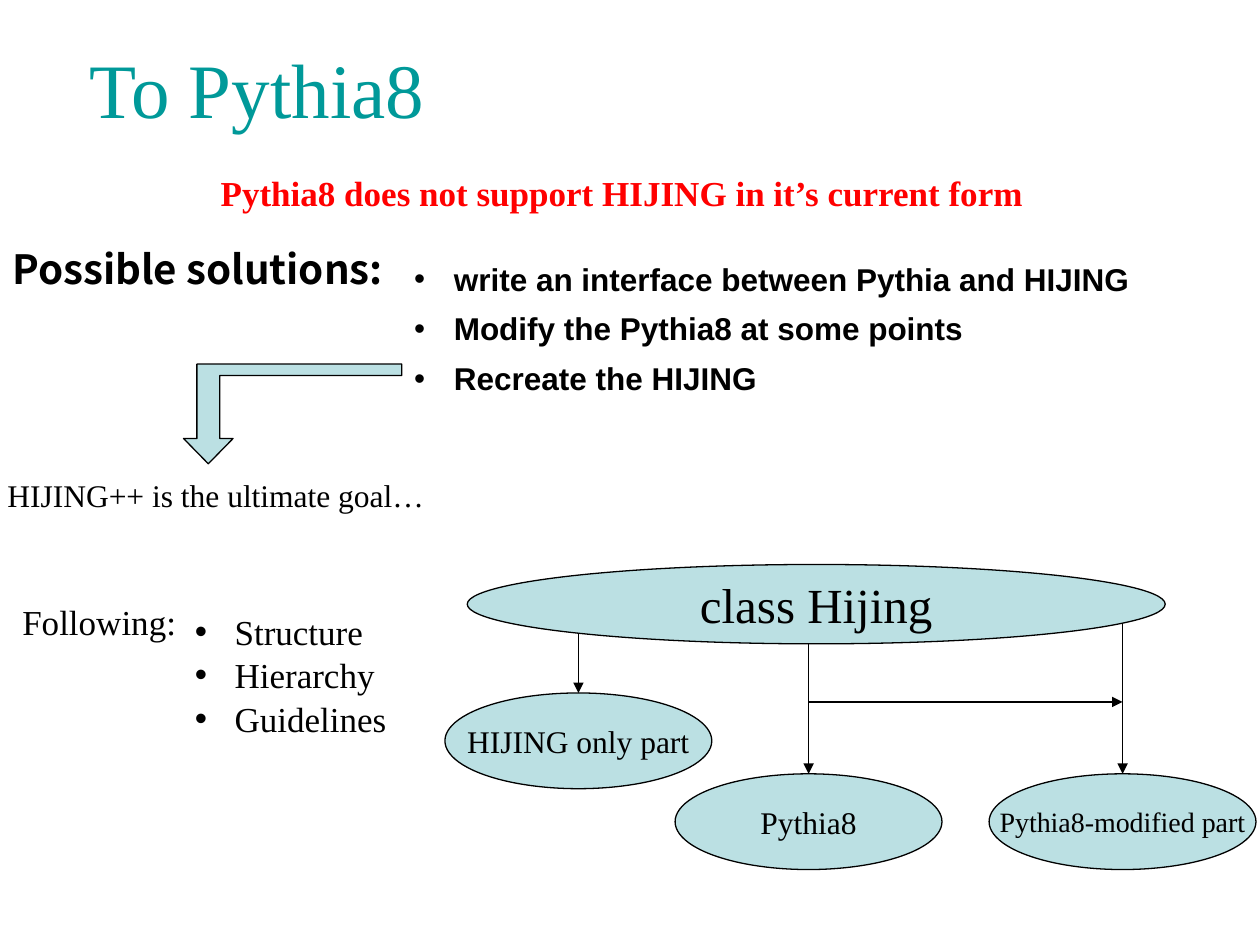
from lxml.etree import SubElement
from pptx import Presentation
from pptx.dml.color import RGBColor
from pptx.enum.shapes import MSO_CONNECTOR, MSO_SHAPE
from pptx.enum.text import MSO_ANCHOR, PP_ALIGN
from pptx.oxml.ns import qn
from pptx.util import Cm, Pt

THEME = {
    "black": RGBColor(0x00, 0x00, 0x00),
    "teal": RGBColor(0x00, 0x99, 0x99),
    "red": RGBColor(0xFF, 0x00, 0x00),
    "pale": RGBColor(0xBB, 0xE0, 0xE3),
    "serif": "Times New Roman",
    "sans": "Arial",
    "heading": "Noto Sans CJK SC",
    "title": 44,
    "class": 28,
    "subtitle": 23,
    "large": 20,
    "body": 18,
    "small": 16,
    "line": 0.75,
    "indent": 0.8,
}


def font_format(size, name="serif", color="black", bold=False):
    return {"size": Pt(THEME[size]), "name": THEME[name], "bold": bold, "color": THEME[color]}


TITLE = ("To Pythia8", (1.55, 0.58, 22.81, 2.39))
TEXTS = [
    {"lines": ["Pythia8 does not support HIJING in it’s current form"],
     "box": (0.74, 3.33, 23.6, 1.12), "font": font_format("large", color="red", bold=True),
     "paragraph": {"alignment": PP_ALIGN.CENTER}},
    {"lines": ["Possible solutions:"],
     "box": (0, 4.8, 8.79, 1.24), "font": font_format("subtitle", "heading", bold=True)},
    {"lines": ["write an interface between Pythia and HIJING",
               "Modify the Pythia8 at some points", "Recreate the HIJING"],
     "box": (8.1, 5.08, 15.06, 3), "font": font_format("body", "sans", bold=True),
     "paragraph": {"space_after": Pt(6), "line_spacing": 1.04}, "bullet": True},
    {"lines": ["HIJING++ is the ultimate goal…"],
     "box": (-0.1, 9.47, 8.99, 1.02), "font": font_format("body")},
    {"lines": ["Following:"], "box": (0.2, 11.99, 3.73, 1.12), "font": font_format("large")},
    {"lines": ["Structure", "Hierarchy", "Guidelines"],
     "box": (3.68, 12.14, 4.6, 3.58), "font": font_format("large"),
     "paragraph": {"line_spacing": 1.04}, "bullet": True},
]

NODE_SIZE = (5.38, 1.93)
CLASS_NODE = ("class Hijing", (9.42, 11.38, 14.07, 1.6), "class")
CHILD_NODES = [
    ("HIJING only part", (8.97, 13.97), "body"),
    ("Pythia8", (13.61, 15.6), "body"),
    ("Pythia8-modified part", (19.94, 15.6), "small"),
]
ARROW_STARTS = [12.78, 12.98, 12.55]
CROSS_ARROW_Y = 14.15
BENT_ARROW = [(4.2, 9.35), (4.7, 8.84), (4.43, 8.84), (4.43, 7.57), (8.1, 7.57),
              (8.1, 7.34), (3.97, 7.34), (3.97, 8.84), (3.7, 8.84)]


def lengths(values):
    return [Cm(value) for value in values]


def apply_format(target, values):
    for name, value in values.items():
        setattr(target, name, value)


def add_bullet(paragraph):
    properties = paragraph._p.get_or_add_pPr()
    properties.set("marL", str(Cm(THEME["indent"])))
    properties.set("indent", str(-Cm(THEME["indent"])))
    SubElement(properties, qn("a:buFont")).set("typeface", THEME["sans"])
    SubElement(properties, qn("a:buChar")).set("char", "•")


def write(frame, lines, font, paragraph_format=None, bullet=False):
    for index, line in enumerate(lines):
        paragraph = frame.add_paragraph() if index else frame.paragraphs[0]
        apply_format(paragraph, paragraph_format or {"alignment": PP_ALIGN.LEFT})
        if bullet:
            add_bullet(paragraph)
        run = paragraph.add_run()
        run.text = line
        apply_format(run.font, {key: font[key] for key in ("size", "name", "bold")})
        run.font.color.rgb = font["color"]


def style_line(line):
    line.color.rgb = THEME["black"]
    line.width = Pt(THEME["line"])


def style_shape(shape):
    shape.shadow.inherit = False
    shape.fill.solid()
    shape.fill.fore_color.rgb = THEME["pale"]
    style_line(shape.line)


def add_node(shapes, text, box, size):
    shape = shapes.add_shape(MSO_SHAPE.OVAL, *lengths(box))
    style_shape(shape)
    apply_format(shape.text_frame, {"word_wrap": False, "vertical_anchor": MSO_ANCHOR.MIDDLE})
    write(shape.text_frame, [text], font_format(size), {"alignment": PP_ALIGN.CENTER})


def add_arrow(shapes, start, end):
    connector = shapes.add_connector(MSO_CONNECTOR.STRAIGHT, *lengths(start + end))
    style_line(connector.line)
    SubElement(connector.line._get_or_add_ln(), qn("a:tailEnd")).set("type", "triangle")
    SubElement(connector._element.spPr, qn("a:effectLst"))


def add_diagram(slide):
    shapes = slide.shapes.add_group_shape().shapes
    add_node(shapes, *CLASS_NODE)
    centers = [left + NODE_SIZE[0] / 2 for _, (left, _), _ in CHILD_NODES]
    for (text, position, size), center, start in zip(CHILD_NODES, centers, ARROW_STARTS):
        add_node(shapes, text, position + NODE_SIZE, size)
        add_arrow(shapes, (center, start), (center, position[1]))
    add_arrow(shapes, (centers[1], CROSS_ARROW_Y), (centers[2], CROSS_ARROW_Y))


def add_bent_arrow(slide):
    points = [tuple(lengths(point)) for point in BENT_ARROW]
    builder = slide.shapes.build_freeform(*points[0])
    builder.add_line_segments(points[1:], close=True)
    style_shape(builder.convert_to_shape())


def place_title(slide):
    text, box = TITLE
    title = slide.shapes.title
    apply_format(title, dict(zip(("left", "top", "width", "height"), lengths(box))))
    title.text_frame.vertical_anchor = MSO_ANCHOR.MIDDLE
    write(title.text_frame, [text], font_format("title", color="teal"))


def main():
    presentation = Presentation()
    apply_format(presentation, {"slide_width": Cm(25.4), "slide_height": Cm(19.05)})
    slide = presentation.slides.add_slide(presentation.slide_layouts[5])
    place_title(slide)
    add_diagram(slide)
    for text in TEXTS:
        frame = slide.shapes.add_textbox(*lengths(text["box"])).text_frame
        frame.word_wrap = True
        write(frame, text["lines"], text["font"], text.get("paragraph"), text.get("bullet", False))
    add_bent_arrow(slide)
    presentation.save("out.pptx")


if __name__ == "__main__":
    main()
